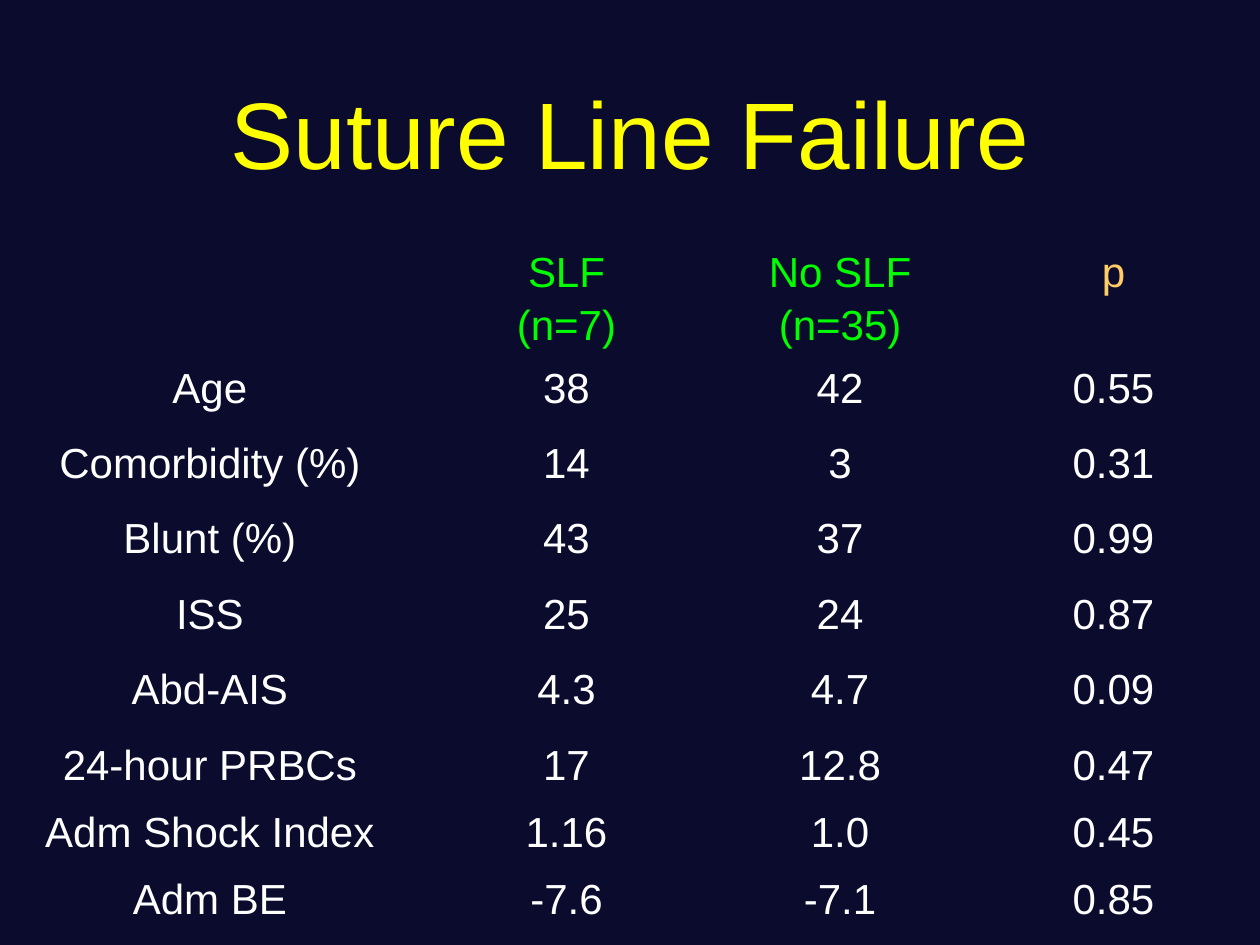
from pptx import Presentation
from pptx.dml.color import RGBColor
from pptx.enum.text import MSO_ANCHOR, PP_ALIGN
from pptx.oxml.ns import qn
from pptx.util import Cm, Pt

CENTER = PP_ALIGN.CENTER
MIDDLE = MSO_ANCHOR.MIDDLE

NAVY = RGBColor(0x0A, 0x0B, 0x2D)
YELLOW = RGBColor(0xFF, 0xFF, 0x00)
GREEN = RGBColor(0x00, 0xFF, 0x00)
ORANGE = RGBColor(0xFF, 0xCC, 0x66)
WHITE = RGBColor(0xFF, 0xFF, 0xFF)

FONT = "Arial"
NO_STYLE_NO_GRID = "{2D5ABB26-0587-4C30-8999-92F81FD0307C}"

COL_WIDTHS = [8.46, 5.92, 5.11, 5.91]
ROW_HEIGHTS = [2.34] + [1.52] * 5 + [1.35] * 3
HEADER_COLORS = [WHITE, GREEN, GREEN, ORANGE]
ROWS = [
    ["", "SLF\n(n=7)", "No SLF\n(n=35)", "p"],
    ["Age", "38", "42", "0.55"],
    ["Comorbidity (%)", "14", "3", "0.31"],
    ["Blunt (%)", "43", "37", "0.99"],
    ["ISS", "25", "24", "0.87"],
    ["Abd-AIS", "4.3", "4.7", "0.09"],
    ["24-hour PRBCs", "17", "12.8", "0.47"],
    ["Adm Shock Index", "1.16", "1.0", "0.45"],
    ["Adm BE", "-7.6", "-7.1", "0.85"],
]


def write_lines(tf, text, size, color, spacing=1.0):
    """Write each line of the text as a centred paragraph."""
    for i, line in enumerate(text.split("\n")):
        p = tf.add_paragraph() if i else tf.paragraphs[0]
        p.alignment = CENTER
        p.line_spacing = spacing
        r = p.add_run()
        r.text = line
        r.font.name = FONT
        r.font.size = Pt(size)
        r.font.color.rgb = color


def add_title(s, left, top, width, height):
    tf = s.shapes.add_textbox(left, top, width, height).text_frame
    tf.word_wrap = True
    tf.vertical_anchor = MIDDLE
    write_lines(tf, "Suture Line Failure", 54, YELLOW)


def fill_cell(cell, text, color):
    cell.fill.background()
    cell.margin_left = cell.margin_right = Cm(0.18)
    cell.margin_top = cell.margin_bottom = 0
    if text:
        write_lines(cell.text_frame, text, 24, color, 1.15)


def add_results_table(s, left, top, width, height):
    frame = s.shapes.add_table(len(ROWS), len(COL_WIDTHS), left, top, width, height)
    table = frame.table
    table.first_row = table.horz_banding = False
    table._tbl.tblPr.find(qn("a:tableStyleId")).text = NO_STYLE_NO_GRID
    for column, col_width in zip(table.columns, COL_WIDTHS):
        column.width = Cm(col_width)
    for row, row_height in zip(table.rows, ROW_HEIGHTS):
        row.height = Cm(row_height)
    for i, values in enumerate(ROWS):
        for j, text in enumerate(values):
            fill_cell(table.cell(i, j), text, WHITE if i else HEADER_COLORS[j])


def main():
    prs = Presentation()
    prs.slide_width, prs.slide_height = Cm(25.4), Cm(19.05)
    s = prs.slides.add_slide(prs.slide_layouts[6])
    s.background.fill.solid()
    s.background.fill.fore_color.rgb = NAVY
    add_title(s, 0, Cm(1.07), prs.slide_width, Cm(3.18))
    add_results_table(s, 0, Cm(4.88), prs.slide_width, Cm(sum(ROW_HEIGHTS)))
    prs.save("out.pptx")


if __name__ == "__main__":
    main()
